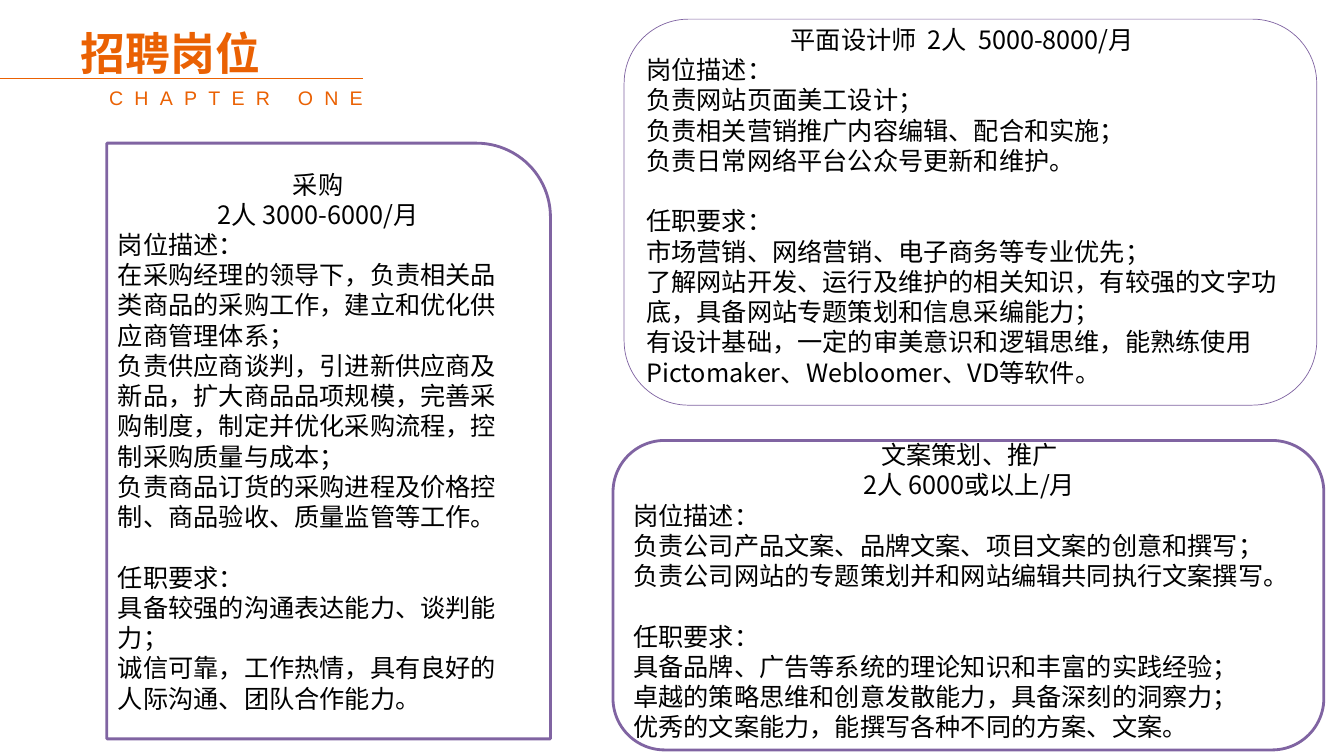
"""Build the recruitment slide with three job cards."""
from dataclasses import dataclass

from lxml import etree
from pptx import Presentation
from pptx.dml.color import RGBColor
from pptx.enum.shapes import MSO_CONNECTOR, MSO_SHAPE
from pptx.enum.text import MSO_ANCHOR, MSO_AUTO_SIZE, PP_ALIGN
from pptx.oxml.ns import qn
from pptx.slide import Slide
from pptx.text.text import TextFrame
from pptx.util import Inches, Pt

ROUND_ONE, ROUND_ALL = MSO_SHAPE.ROUND_1_RECTANGLE, MSO_SHAPE.ROUNDED_RECTANGLE
STRAIGHT = MSO_CONNECTOR.STRAIGHT
TOP, MIDDLE = MSO_ANCHOR.TOP, MSO_ANCHOR.MIDDLE
LEFT, CENTER, RIGHT = PP_ALIGN.LEFT, PP_ALIGN.CENTER, PP_ALIGN.RIGHT
NO_AUTOFIT = MSO_AUTO_SIZE.NONE

ORANGE, PURPLE, BLACK, WHITE = "EA6103", "8064A2", "000000", "FFFFFF"
LATIN_FONT, CHINESE_FONT = "Arial", "Noto Sans CJK SC"
LINE_HEIGHT = Pt(21.6)
COMPARISON_LAYOUT = 4

Area = tuple[float, float, float, float]


@dataclass(frozen=True)
class TextStyle:
    font: str
    size: float
    color: str
    bold: bool = False
    spacing: float = 0


@dataclass(frozen=True)
class JobCard:
    placeholder: int
    outline: MSO_SHAPE
    frame: Area
    text_area: Area
    line_width: float
    anchor: MSO_ANCHOR
    heading: list[str]
    duties: list[str]
    demands: list[str]


TITLE_STYLE = TextStyle(LATIN_FONT, 32, ORANGE, bold=True)
CHAPTER_STYLE = TextStyle(LATIN_FONT, 14, ORANGE, spacing=8)
CARD_STYLE = TextStyle(CHINESE_FONT, 18, BLACK)

CARDS = [
    JobCard(
        2, ROUND_ONE, (1.06, 1.42, 4.4, 5.91), (1.07, 1.42, 4.17, 5.91), 2, MIDDLE,
        ["采购", "2人 3000-6000/月"],
        ["在采购经理的领导下，负责相关品类商品的采购工作，建立和优化供应商管理体系；",
         "负责供应商谈判，引进新供应商及新品，扩大商品品项规模，完善采购制度，"
         "制定并优化采购流程，控制采购质量与成本；",
         "负责商品订货的采购进程及价格控制、商品验收、质量监管等工作。"],
        ["具备较强的沟通表达能力、谈判能力；",
         "诚信可靠，工作热情，具有良好的人际沟通、团队合作能力。"],
    ),
    JobCard(
        3, ROUND_ALL, (6.19, 0.19, 6.87, 3.83), (6.31, 0.19, 6.47, 4.04), 0.5, TOP,
        ["平面设计师  2人  5000-8000/月"],
        ["负责网站页面美工设计；",
         "负责相关营销推广内容编辑、配合和实施；",
         "负责日常网络平台公众号更新和维护。"],
        ["市场营销、网络营销、电子商务等专业优先；",
         "了解网站开发、运行及维护的相关知识，有较强的文字功底，"
         "具备网站专题策划和信息采编能力；",
         "有设计基础，一定的审美意识和逻辑思维，能熟练使用 "
         "Pictomaker、Webloomer、VD等软件。"],
    ),
    JobCard(
        4, ROUND_ALL, (6.08, 4.37, 7.05, 3.07), (6.18, 4.31, 6.87, 3.13), 2, TOP,
        ["文案策划、推广", "2人 6000或以上/月"],
        ["负责公司产品文案、品牌文案、项目文案的创意和撰写；",
         "负责公司网站的专题策划并和网站编辑共同执行文案撰写。"],
        ["具备品牌、广告等系统的理论知识和丰富的实践经验；",
         "卓越的策略思维和创意发散能力，具备深刻的洞察力；",
         "优秀的文案能力，能撰写各种不同的方案、文案。"],
    ),
]


def rgb(color: str) -> RGBColor:
    """Turn a hex string into a colour."""
    return RGBColor.from_string(color)


def write_text(page: Slide, index: int, area: Area, lines: list[str],
               style: TextStyle, align: PP_ALIGN, anchor: MSO_ANCHOR) -> TextFrame:
    """Fill a placeholder, bring it to the front and return its text frame."""
    box = page.placeholders[index]
    box.left, box.top, box.width, box.height = map(Inches, area)
    box.element.getparent().append(box.element)
    frame = box.text_frame
    frame.auto_size = NO_AUTOFIT
    frame.word_wrap = True
    frame.vertical_anchor = anchor
    frame.text = "\n".join(lines)
    for para in frame.paragraphs:
        properties = para._p.get_or_add_pPr()
        properties.set("marL", "0")
        properties.set("indent", "0")
        etree.SubElement(properties, qn("a:buNone"))
        para.alignment = align
        para.space_before = Pt(0)
        for span in para.runs:
            span.font.size = Pt(style.size)
            span.font.bold = style.bold
            span.font.color.rgb = rgb(style.color)
            span.font.name = style.font
            run_properties = span.font._element
            east_asian = etree.SubElement(run_properties, qn("a:ea"))
            east_asian.set("typeface", CHINESE_FONT)
            if style.spacing:
                run_properties.set("spc", str(round(style.spacing * 100)))
    return frame


def draw_card(page: Slide, card: JobCard) -> None:
    """Draw the outline of a job card and its text."""
    outline = page.shapes.add_shape(card.outline, *map(Inches, card.frame))
    outline.shadow.inherit = False
    outline.fill.solid()
    outline.fill.fore_color.rgb = rgb(WHITE)
    outline.line.color.rgb = rgb(PURPLE)
    outline.line.width = Pt(card.line_width)
    lines = [*card.heading, "岗位描述：", *card.duties, "任职要求：", *card.demands]
    frame = write_text(page, card.placeholder, card.text_area, lines,
                       CARD_STYLE, LEFT, card.anchor)
    for para in frame.paragraphs:
        para.line_spacing = LINE_HEIGHT
    for para in frame.paragraphs[:len(card.heading)]:
        para.alignment = CENTER
    demands_label = frame.paragraphs[-len(card.demands) - 1]
    demands_label.space_before = LINE_HEIGHT


def draw_header(page: Slide) -> None:
    """Draw the title, its rule and the chapter label."""
    rule = page.shapes.add_connector(
        STRAIGHT, Inches(0), Inches(0.78), Inches(3.6), Inches(0.78))
    rule.line.color.rgb = rgb(ORANGE)
    rule.line.width = Pt(0.5)
    etree.SubElement(rule.element.spPr, qn("a:effectLst"))
    write_text(page, 0, (0.7, 0.2, 2.9, 0.64), ["招聘岗位"],
               TITLE_STYLE, LEFT, MIDDLE)
    write_text(page, 1, (0.3, 0.8, 3.4, 0.4), ["CHAPTER ONE"],
               CHAPTER_STYLE, RIGHT, TOP)


def main() -> None:
    """Build and save the slide."""
    deck = Presentation()
    deck.slide_width, deck.slide_height = Inches(13.33), Inches(7.5)
    page = deck.slides.add_slide(deck.slide_layouts[COMPARISON_LAYOUT])
    for card in CARDS:
        draw_card(page, card)
    draw_header(page)
    deck.save("out.pptx")


if __name__ == "__main__":
    main()
